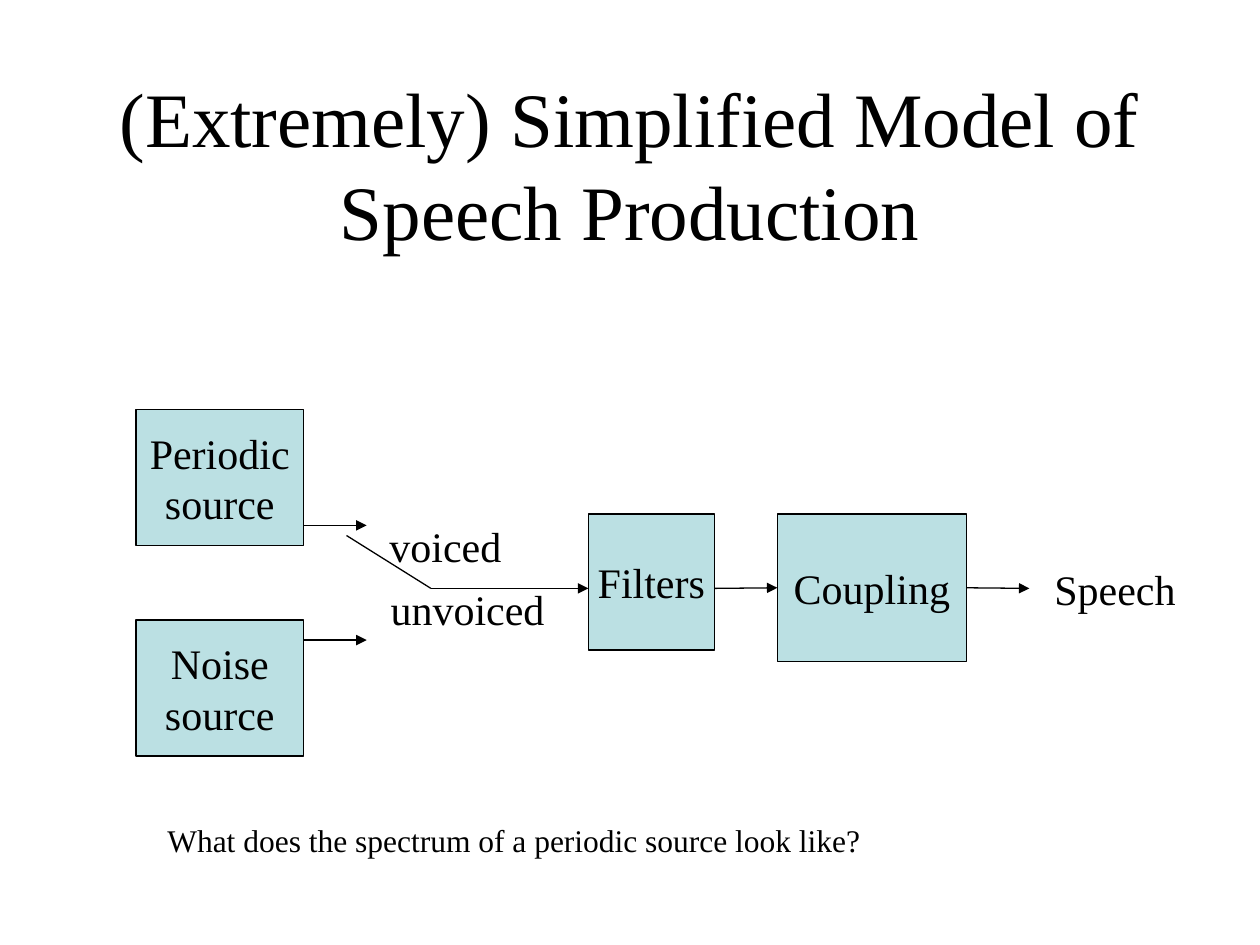
from dataclasses import dataclass

from lxml import etree
from pptx import Presentation
from pptx.dml.color import RGBColor
from pptx.enum import shapes, text
from pptx.oxml import ns
from pptx.util import Inches, Pt


@dataclass(frozen=True)
class Theme:
    font: str = "Times New Roman"
    ink: RGBColor = RGBColor(0, 0, 0)
    block: RGBColor = RGBColor(0xBB, 0xE0, 0xE3)
    line: Pt = Pt(0.75)
    title: Pt = Pt(44)
    label: Pt = Pt(24)
    question: Pt = Pt(18)


@dataclass(frozen=True)
class Box:
    """A region in inches; areas inside it are placed from its corner."""
    left: float
    top: float
    width: float
    height: float

    def inner(self, left, top, width, height):
        return Box(self.left + left, self.top + top, width, height)

    def lengths(self):
        return [Inches(n) for n in (self.left, self.top, self.width, self.height)]


THEME = Theme()
CENTER, LEFT = text.PP_ALIGN.CENTER, text.PP_ALIGN.LEFT
MIDDLE, TOP = text.MSO_ANCHOR.MIDDLE, text.MSO_ANCHOR.TOP


def write(shape, lines, size, align, anchor, wrap=False):
    frame = shape.text_frame
    frame.word_wrap = wrap
    frame.vertical_anchor = anchor
    for number, line in enumerate(lines):
        paragraph = frame.add_paragraph() if number else frame.paragraphs[0]
        paragraph.alignment = align
        run = paragraph.add_run()
        run.text = line
        run.font.name = THEME.font
        run.font.size = size
        run.font.color.rgb = THEME.ink


def add_text(slide, box, line, size=THEME.label, align=LEFT, anchor=TOP, wrap=False):
    shape = slide.shapes.add_textbox(*box.lengths())
    write(shape, [line], size, align, anchor, wrap)


def add_block(slide, box, *lines):
    shape = slide.shapes.add_shape(shapes.MSO_SHAPE.RECTANGLE, *box.lengths())
    shape.shadow.inherit = False
    shape.fill.solid()
    shape.fill.fore_color.rgb = THEME.block
    shape.line.color.rgb = THEME.ink
    shape.line.width = THEME.line
    write(shape, lines, THEME.label, CENTER, MIDDLE)
    return shape


def add_line(slide, box, arrow=True):
    """Draw a line from the box's top left to its bottom right corner."""
    left, top, width, height = box.lengths()
    line = slide.shapes.add_connector(
        shapes.MSO_CONNECTOR.STRAIGHT, left, top, left + width, top + height)
    line.line.color.rgb = THEME.ink
    line.line.width = THEME.line
    properties = line._element.spPr
    if arrow:
        outline = properties.find(ns.qn("a:ln"))
        etree.SubElement(outline, ns.qn("a:tailEnd"), type="triangle")
    etree.SubElement(properties, ns.qn("a:effectLst"))
    return line


def add_title(slide, box):
    add_text(slide, box, "(Extremely) Simplified Model of Speech Production",
             THEME.title, CENTER, MIDDLE, wrap=True)


def add_sources(slide, box):
    """Two sources, each with an arrow towards the switch."""
    for name, top, arrow_top in (("Periodic", 0, 0.92), ("Noise", 1.67, 1.83)):
        add_block(slide, box.inner(0, top, 1.33, 1.08), name, "source")
        add_line(slide, box.inner(1.33, arrow_top, 0.5, 0))


def add_switch(slide, box):
    """The voiced or unvoiced switch, ending at the filters."""
    add_line(slide, box.inner(0, 0.17, 0.67, 0.42), arrow=False)
    add_line(slide, box.inner(0.67, 0.59, 1.25, 0))
    add_text(slide, box.inner(0.24, 0, 1.09, 0.5), "voiced", align=CENTER)
    add_text(slide, box.inner(0.25, 0.5, 1.42, 0.5), "unvoiced", align=CENTER)


def add_output_chain(slide, box):
    """Filters, coupling and the resulting speech."""
    add_block(slide, box.inner(0, 0, 1, 1.08), "Filters")
    coupling = add_block(slide, box.inner(1.5, 0, 1.5, 1.17), "Coupling")
    add_line(slide, box.inner(1, 0.59, 0.5, 0)).end_connect(coupling, 1)
    add_line(slide, box.inner(3, 0.59, 0.5, 0)).begin_connect(coupling, 3)
    add_text(slide, box.inner(3.6, 0.34, 1.16, 0.5), "Speech")


def add_question(slide, box):
    add_text(slide, box, "What does the spectrum of a periodic source look like?",
             THEME.question)


def main():
    presentation = Presentation()
    presentation.slide_width = Inches(10)
    presentation.slide_height = Inches(7.5)
    slide = presentation.slides.add_slide(presentation.slide_layouts[6])
    add_title(slide, Box(0.75, 0.67, 8.5, 1.25))
    add_sources(slide, Box(1.08, 3.25, 1.83, 2.75))
    add_switch(slide, Box(2.75, 4.08, 1.92, 1))
    add_output_chain(slide, Box(4.67, 4.08, 4.76, 1.17))
    add_question(slide, Box(1.23, 6.47, 5.71, 0.4))
    presentation.save("out.pptx")


if __name__ == "__main__":
    main()
